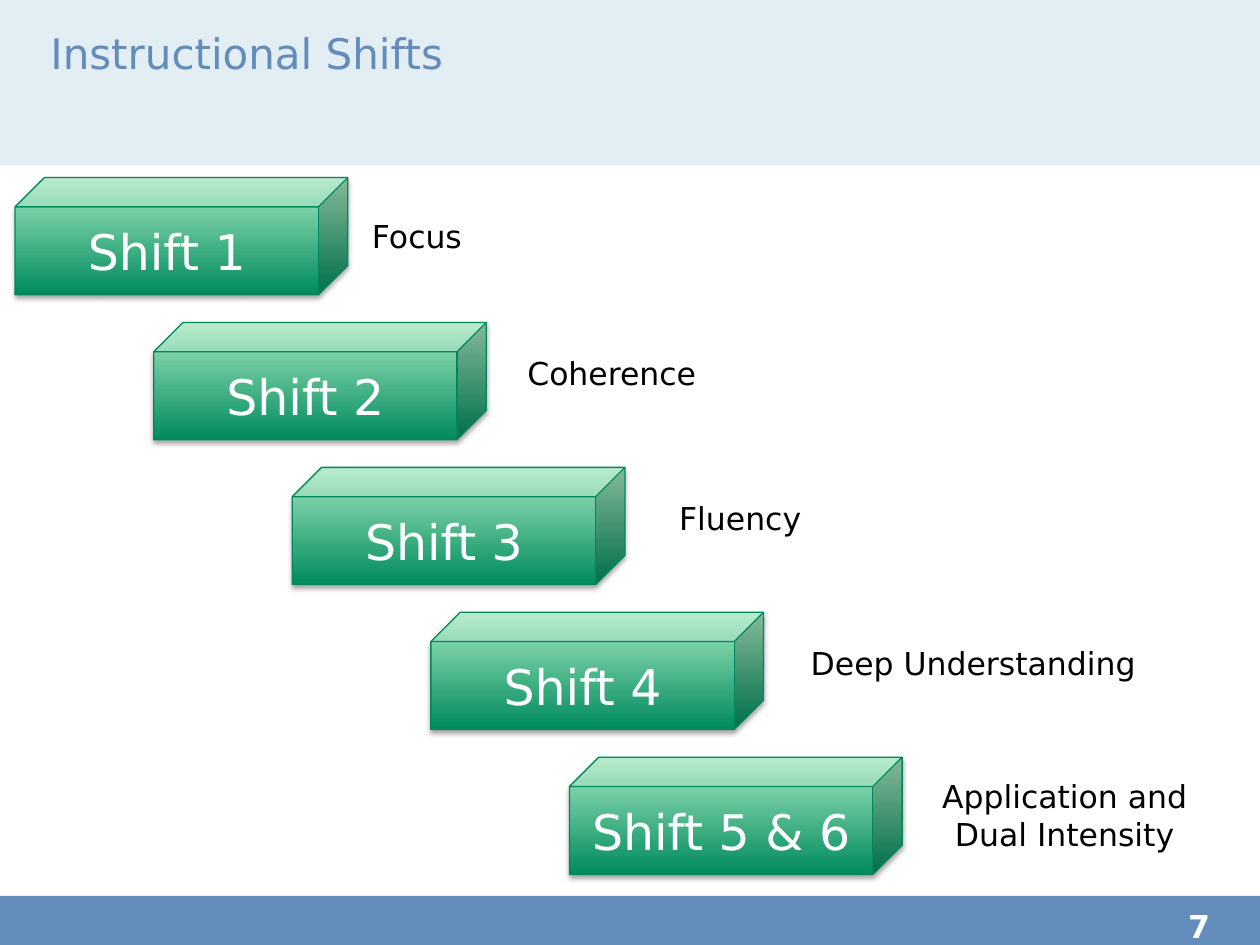
from lxml import etree
from pptx import Presentation
from pptx.dml.color import RGBColor
from pptx.enum.shapes import MSO_SHAPE
from pptx.enum.text import MSO_ANCHOR, PP_ALIGN
from pptx.oxml.ns import qn
from pptx.util import Inches, Pt

RECT, CUBE = MSO_SHAPE.RECTANGLE, MSO_SHAPE.CUBE
TOP, MIDDLE = MSO_ANCHOR.TOP, MSO_ANCHOR.MIDDLE
LEFT, CENTER = PP_ALIGN.LEFT, PP_ALIGN.CENTER

WIDTH, HEIGHT = 10, 7.5
FONT = "DejaVu Sans"
TITLE_ONLY = 5
COLORS = {
    "band": "E3EDF4", "blue": "628DBB", "white": "FFFFFF", "black": "000000",
    "dark green": "008B5D", "light green": "A5E8C0", "edge": "00885B",
}
NO_MARGINS = (0, 0, 0, 0)
TEXT_MARGINS = (0.1, 0.05, 0.1, 0.05)

# Staircase: size of a step block and distance from one block to the next
BLOCK_WIDTH, BLOCK_HEIGHT = 2.64, 0.93
STEP_RIGHT, STEP_DOWN = 1.1, 1.15

# Block text, label text, label width, label height, label drop below block top
SHIFTS = [
    ("Shift 1", "Focus", 1.1, 0.4, 0.26),
    ("Shift 2", "Coherence", 1.99, 0.4, 0.2),
    ("Shift 3", "Fluency", 1.83, 0.4, 0.2),
    ("Shift 4", "Deep Understanding", 3.33, 0.4, 0.2),
    ("Shift 5 & 6", "Application and Dual Intensity", 2.58, 0.71, 0.11),
]


def color(name):
    return RGBColor.from_string(COLORS[name])


def inches(box):
    return [Inches(length) for length in box]


def write(shape, text, size, ink, align=LEFT, anchor=TOP,
          margins=TEXT_MARGINS, bold=False):
    frame = shape.text_frame
    left, top, right, bottom = inches(margins)
    frame_format = {
        "word_wrap": True, "vertical_anchor": anchor,
        "margin_left": left, "margin_top": top,
        "margin_right": right, "margin_bottom": bottom,
    }
    for name, value in frame_format.items():
        setattr(frame, name, value)
    para = frame.paragraphs[0]
    para.alignment = align
    span = para.add_run()
    span.text = text
    for name, value in {"name": FONT, "size": Pt(size), "bold": bold}.items():
        setattr(span.font, name, value)
    span.font.color.rgb = color(ink)


def add_band(page, box, fill):
    band = page.shapes.add_shape(RECT, *inches(box))
    band.shadow.inherit = False
    band.fill.solid()
    band.fill.fore_color.rgb = color(fill)
    band.line.fill.background()


def add_header(page, box):
    add_band(page, box, "band")
    left, top, width, _ = box
    title = page.shapes.title
    title_box = inches((left + 0.4, top + 0.22, width - 1, 0.98))
    for name, value in zip(("left", "top", "width", "height"), title_box):
        setattr(title, name, value)
    write(title, "Instructional Shifts", 24, "blue", margins=(0, 0, 0.1, 0.05))
    # Bring the title in front of its band
    title.element.getparent().append(title.element)


def add_footer(page, box):
    add_band(page, box, "blue")
    left, top, width, _ = box
    number = page.shapes.add_textbox(
        *inches((left + width - 0.57, top + 0.09, 0.57, 0.3)))
    write(number, "7", 18, "white", margins=NO_MARGINS, bold=True)


def add_soft_shadow(shape):
    shape.shadow.inherit = False
    effects = shape.element.spPr.find(qn("a:effectLst"))
    shadow = etree.SubElement(
        effects, qn("a:outerShdw"), blurRad=str(Pt(3.1)), dist=str(Pt(1.8)),
        dir="5400000", rotWithShape="0")
    tint = etree.SubElement(shadow, qn("a:srgbClr"), val=COLORS["black"])
    etree.SubElement(tint, qn("a:alpha"), val="35000")


def add_block(page, box, text):
    block = page.shapes.add_shape(CUBE, *inches(box))
    block.fill.gradient()
    block.fill.gradient_angle = 90
    for stop, name in zip(block.fill.gradient_stops,
                          ("dark green", "light green")):
        stop.color.rgb = color(name)
    block.line.color.rgb = color("edge")
    block.line.width = Pt(0.75)
    add_soft_shadow(block)
    write(block, text, 28, "white", CENTER, MIDDLE, NO_MARGINS)


def add_staircase(page, left, top):
    for row, (name, meaning, width, height, drop) in enumerate(SHIFTS):
        x, y = left + row * STEP_RIGHT, top + row * STEP_DOWN
        add_block(page, (x, y, BLOCK_WIDTH, BLOCK_HEIGHT), name)
        # Each label starts where its block ends
        label = page.shapes.add_textbox(
            *inches((x + BLOCK_WIDTH, y + drop, width, height)))
        write(label, meaning, 18, "black", CENTER)


def main():
    deck = Presentation()
    deck.slide_width, deck.slide_height = inches((WIDTH, HEIGHT))
    page = deck.slides.add_slide(deck.slide_layouts[TITLE_ONLY])
    add_header(page, (0, 0, WIDTH, 1.31))
    add_footer(page, (0, 7.11, WIDTH, HEIGHT - 7.11))
    add_staircase(page, 0.12, 1.41)
    deck.save("out.pptx")


if __name__ == "__main__":
    main()
